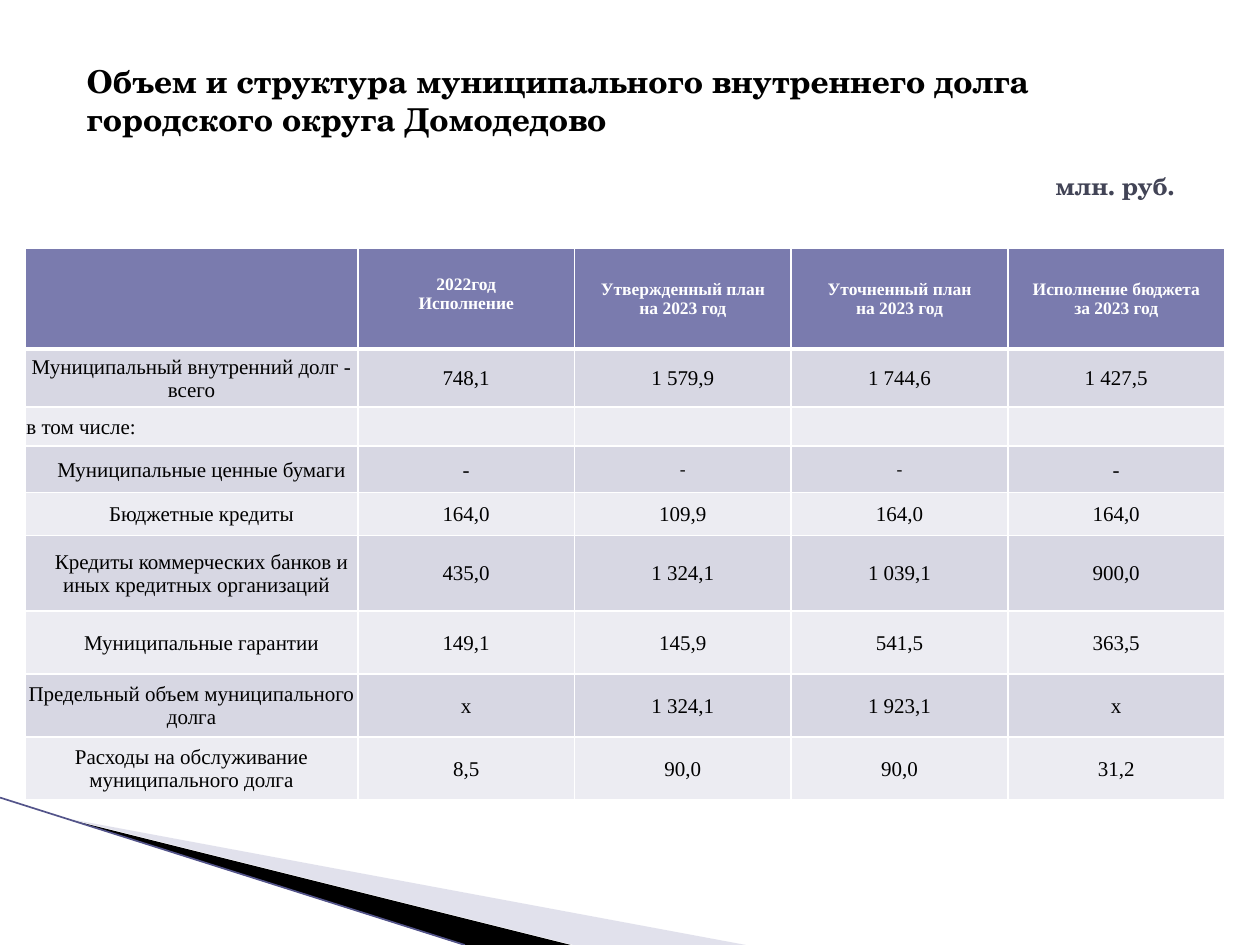
import pptx
import pptx.util
import pptx.dml.color
import pptx.enum.text
import pptx.oxml
import pptx.oxml.ns
import pptx.enum.shapes

Inches = pptx.util.Inches
Pt = pptx.util.Pt
RGBColor = pptx.dml.color.RGBColor
ALIGN = pptx.enum.text.PP_ALIGN
ANCHOR = pptx.enum.text.MSO_ANCHOR

WHITE = RGBColor(0xFF, 0xFF, 0xFF)
BLACK = RGBColor(0, 0, 0)
SLATE = RGBColor(0x42, 0x44, 0x56)
HEAD = RGBColor(0x7A, 0x7B, 0xAE)
BANDS = RGBColor(0xD7, 0xD7, 0xE3), RGBColor(0xEC, 0xEC, 0xF2)
LILAC = RGBColor(0xB6, 0xB6, 0xD1)
VIOLET = RGBColor(0x53, 0x54, 0x8A)

SCHOOL = "TeX Gyre Schola"
TIMES = "Times New Roman"

COLS = [2.64] + [1.72] * 4
HEIGHTS = [0.8, 0.46, 0.31, 0.37, 0.34, 0.6, 0.5, 0.5, 0.5]
ROWS = [
    ["", "2022год\nИсполнение", "Утвержденный план\nна 2023 год",
     "Уточненный план\nна 2023 год", "Исполнение бюджета\nза 2023 год"],
    ["Муниципальный внутренний долг - всего", "748,1", "1 579,9", "1 744,6", "1 427,5"],
    ["в том числе:", "", "", "", ""],
    ["Муниципальные ценные бумаги", "-", "-", "-", "-"],
    ["Бюджетные кредиты", "164,0", "109,9", "164,0", "164,0"],
    ["Кредиты коммерческих банков и иных кредитных организаций",
     "435,0", "1 324,1", "1 039,1", "900,0"],
    ["Муниципальные гарантии", "149,1", "145,9", "541,5", "363,5"],
    ["Предельный объем муниципального долга", "x", "1 324,1", "1 923,1", "x"],
    ["Расходы на обслуживание муниципального долга", "8,5", "90,0", "90,0", "31,2"],
]
INTRO = 2
PARTS = range(3, 7)
SMALL = {(3, 2), (3, 3)}


def make(tag, **attrs):
    """Return a new drawing element with the given attributes."""
    node = pptx.oxml.parse_xml(f"<a:{tag} {pptx.oxml.ns.nsdecls('a')}/>")
    for name, value in attrs.items():
        node.set(name, str(value))
    return node


def write(para, text, face, size, color, bold):
    """Add one styled run to a paragraph."""
    run = para.add_run()
    run.text = text
    font = run.font
    font.name, font.size, font.bold = face, Pt(size), bold
    font.color.rgb = color


def label(slide, box, text, size, color, wrap):
    """Place a bold text box."""
    frame = slide.shapes.add_textbox(*map(Inches, box)).text_frame
    frame.word_wrap = wrap
    frame.vertical_anchor = ANCHOR.MIDDLE if wrap else ANCHOR.TOP
    write(frame.paragraphs[0], text, SCHOOL, size, color, True)


def wedge(slide, left, top, points, color, alpha=None):
    """Draw a filled outline from points relative to its corner."""
    spots = [(Inches(left + x), Inches(top + y)) for x, y in points]
    path = slide.shapes.build_freeform(*spots[0], scale=1.0)
    path.add_line_segments(spots[1:], close=True)
    shape = path.convert_to_shape()
    shape.shadow.inherit = False
    shape.fill.solid()
    shape.fill.fore_color.rgb = color
    shape.line.fill.background()
    if alpha:
        tint = shape.fill._xPr.find(".//" + pptx.oxml.ns.qn("a:srgbClr"))
        tint.append(make("alpha", val=alpha * 1000))


def corner(slide, left, top, width, height):
    """Draw the slanted wedges and the line in the bottom corner."""
    low = height - 0.17
    wedge(slide, left + 0.55, top + 0.17, [(0, 0), (width - 0.55, low), (4, low)], LILAC, 40)
    wedge(slide, left + 0.53, top + 0.17, [(0, 0), (4, low), (3.15, low)], BLACK)
    line = slide.shapes.add_connector(
        pptx.enum.shapes.MSO_CONNECTOR.STRAIGHT, Inches(left), Inches(top),
        Inches(left + 3.69), Inches(top + height))
    line.line.color.rgb = VIOLET
    line.line.width = Pt(0.95)
    line._element.spPr.append(make("effectLst"))


def edge(cell, base):
    """Give a cell white borders, the bottom one of the given width."""
    props = cell._tc.get_or_add_tcPr()
    for spot, side in enumerate("LRTB"):
        line = make("ln" + side, w=Pt(base if side == "B" else 1))
        fill = make("solidFill")
        fill.append(make("srgbClr", val=WHITE))
        line.append(fill)
        props.insert(spot, line)


def fill_cell(cell, row, col, text):
    """Style one cell and write its text."""
    head = row == 0
    part = col == 0 and row in PARTS
    cell.fill.solid()
    cell.fill.fore_color.rgb = HEAD if head else BANDS[(row - 1) % 2]
    cell.vertical_anchor = ANCHOR.MIDDLE
    cell.margin_left = Inches(0.09 if part else 0.01)
    cell.margin_right = cell.margin_top = Inches(0.01)
    cell.margin_bottom = Inches(0)
    if head:
        cell.margin_left = cell.margin_right = Inches(0.1)
        cell.margin_bottom = Inches(0.08 if col == 1 else 0)
    edge(cell, 3 if head else 1)
    size = 10 if head or (row, col) in SMALL else 12
    frame = cell.text_frame
    for i, line in enumerate(text.split("\n") if text else []):
        para = frame.add_paragraph() if i else frame.paragraphs[0]
        para.alignment = ALIGN.LEFT if row == INTRO else ALIGN.CENTER
        if part:
            para._p.get_or_add_pPr().set("indent", str(Inches(0.08)))
        write(para, line, TIMES, size, WHITE if head else BLACK, head)


def debt_table(slide, left, top):
    """Place the debt table at the given corner."""
    box = map(Inches, (left, top, sum(COLS), sum(HEIGHTS)))
    table = slide.shapes.add_table(len(ROWS), len(COLS), *box).table
    for col, width in zip(table.columns, COLS):
        col.width = Inches(width)
    for row, height in zip(table.rows, HEIGHTS):
        row.height = Inches(height)
    for r, texts in enumerate(ROWS):
        for c, text in enumerate(texts):
            fill_cell(table.cell(r, c), r, c, text)


def main():
    """Build the slide and save it."""
    deck = pptx.Presentation()
    deck.slide_width, deck.slide_height = Inches(10), Inches(7.5)
    slide = deck.slides.add_slide(deck.slide_layouts[6])
    corner(slide, 0, 6.33, 5.92, 1.17)
    label(slide, (0.59, 0.29, 9, 1.01),
          "Объем и структура муниципального внутреннего долга городского округа Домодедово",
          18, BLACK, True)
    label(slide, (8.28, 1.31, 1.17, 0.34), "млн. руб.", 14, SLATE, False)
    debt_table(slide, 0.2, 1.97)
    deck.save("out.pptx")


if __name__ == "__main__":
    main()
